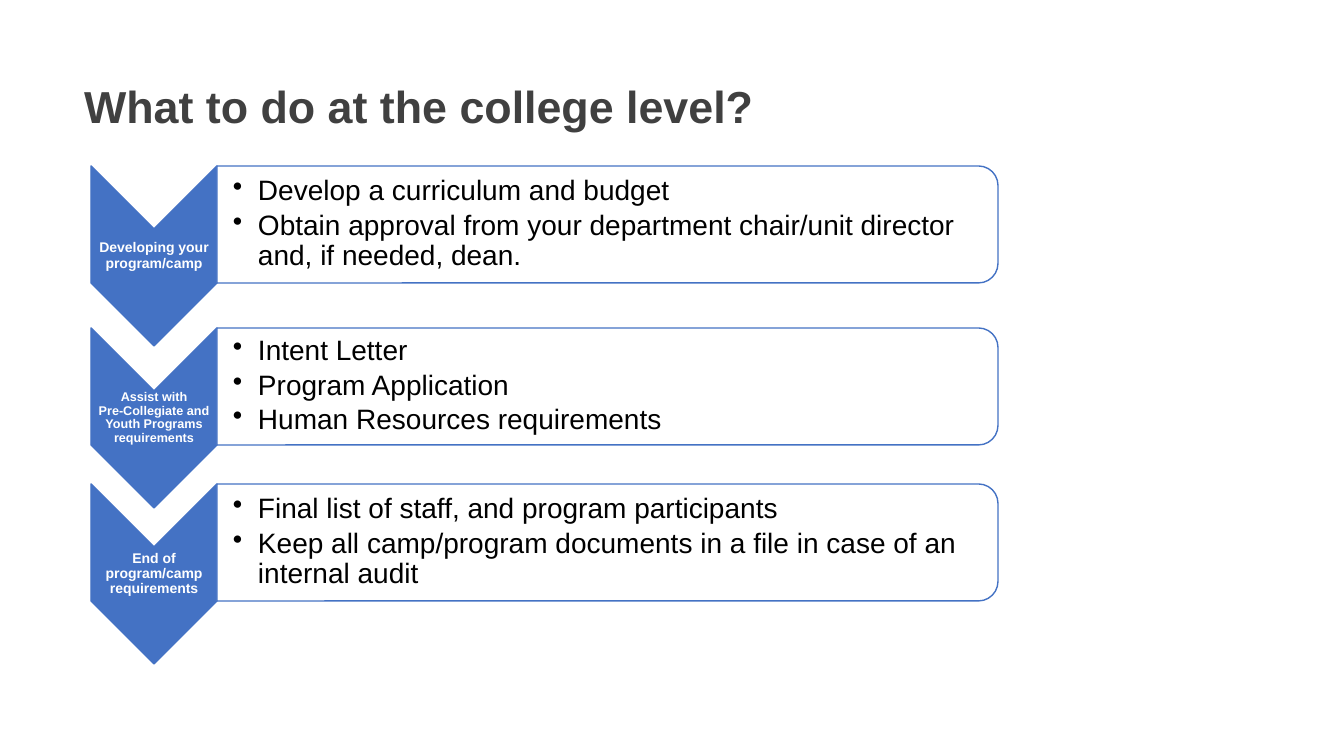
"""Build a slide of three chevron steps, each with a box of bullets."""
import pptx
import pptx.util
import pptx.dml.color
import pptx.enum.shapes
import pptx.enum.text
import pptx.oxml.ns
import lxml.etree

SCALE = 914400 / 100.8
COLORS = {"title": "404040", "blue": "4472C4", "white": "FFFFFF", "black": "000000"}
SHAPES = pptx.enum.shapes.MSO_SHAPE
ALIGN = pptx.enum.text.PP_ALIGN
STEPS = [
    (166, "Developing your program/camp", 10, [
        "Develop a curriculum and budget",
        "Obtain approval from your department chair/unit director and, if needed, dean."]),
    (328, "Assist with\vPre-Collegiate and Youth Programs requirements", 9, [
        "Intent Letter",
        "Program Application",
        "Human Resources requirements"]),
    (484, "End of program/camp requirements", 10, [
        "Final list of staff, and program participants",
        "Keep all camp/program documents in a file in case of an internal audit"]),
]


def px(num):
    return pptx.util.Emu(round(num * SCALE))


def color(name):
    return pptx.dml.color.RGBColor.from_string(COLORS[name])


def style(para, size, tint, bold=False, align=ALIGN.LEFT):
    para.alignment = align
    para.line_spacing = 0.9
    font = para.font
    font.name = "Arial"
    font.size = pptx.util.Pt(size)
    font.bold = bold
    font.color.rgb = color(tint)


def setup(frame, left, edge):
    frame.word_wrap = True
    frame.auto_size = pptx.enum.text.MSO_AUTO_SIZE.NONE
    frame.vertical_anchor = pptx.enum.text.MSO_ANCHOR.MIDDLE
    frame.margin_left = px(left)
    frame.margin_right = frame.margin_top = frame.margin_bottom = px(edge)


def add_title(slide, text):
    title = slide.shapes.title
    title.left, title.top, title.width, title.height = map(px, (74, 76, 1090, 66))
    setup(title.text_frame, 10, 5)
    title.text_frame.text = text
    style(title.text_frame.paragraphs[0], 32, "title", True)


def add_turned(slide, kind, left, top, width, height, fill):
    """Add a shape that fills the given area after a quarter turn."""
    shift = (width - height) / 2
    shape = slide.shapes.add_shape(
        kind, px(left + shift), px(top - shift), px(height), px(width))
    shape.rotation = 90
    shape.shadow.inherit = False
    shape.fill.solid()
    shape.fill.fore_color.rgb = color(fill)
    shape.line.color.rgb = color("blue")
    shape.line.width = pptx.util.Pt(1)


def add_label(slide, top, text, size):
    frame = slide.shapes.add_textbox(px(91), px(top), px(126), px(54)).text_frame
    setup(frame, 1, 1)
    frame.text = text
    style(frame.paragraphs[0], size, "white", True, ALIGN.CENTER)


def add_list(slide, top, items):
    frame = slide.shapes.add_textbox(px(217), px(top), px(775), px(106)).text_frame
    setup(frame, 16, 1)
    for i, item in enumerate(items):
        para = frame.paragraphs[0] if i == 0 else frame.add_paragraph()
        para.text = item
        props = para._p.get_or_add_pPr()
        props.set("marL", str(px(25)))
        props.set("indent", str(px(-25)))
        para.space_after = pptx.util.Pt(3)
        style(para, 20, "black")
        mark = lxml.etree.Element(pptx.oxml.ns.qn("a:buChar"), char="•")
        props.find(pptx.oxml.ns.qn("a:defRPr")).addprevious(mark)


def add_step(slide, top, label, size, items):
    add_turned(slide, SHAPES.CHEVRON, 91, top, 126, 180, "blue")
    add_label(slide, top + 63, label, size)
    add_turned(slide, SHAPES.ROUND_2_SAME_RECTANGLE, 217, top, 781, 117, "white")
    add_list(slide, top + 5, items)


def main():
    deck = pptx.Presentation()
    deck.slide_width, deck.slide_height = px(1344), px(756)
    slide = deck.slides.add_slide(deck.slide_layouts.get_by_name("Title Only"))
    add_title(slide, "What to do at the college level?")
    for step in STEPS:
        add_step(slide, *step)
    deck.save("out.pptx")


if __name__ == "__main__":
    main()
